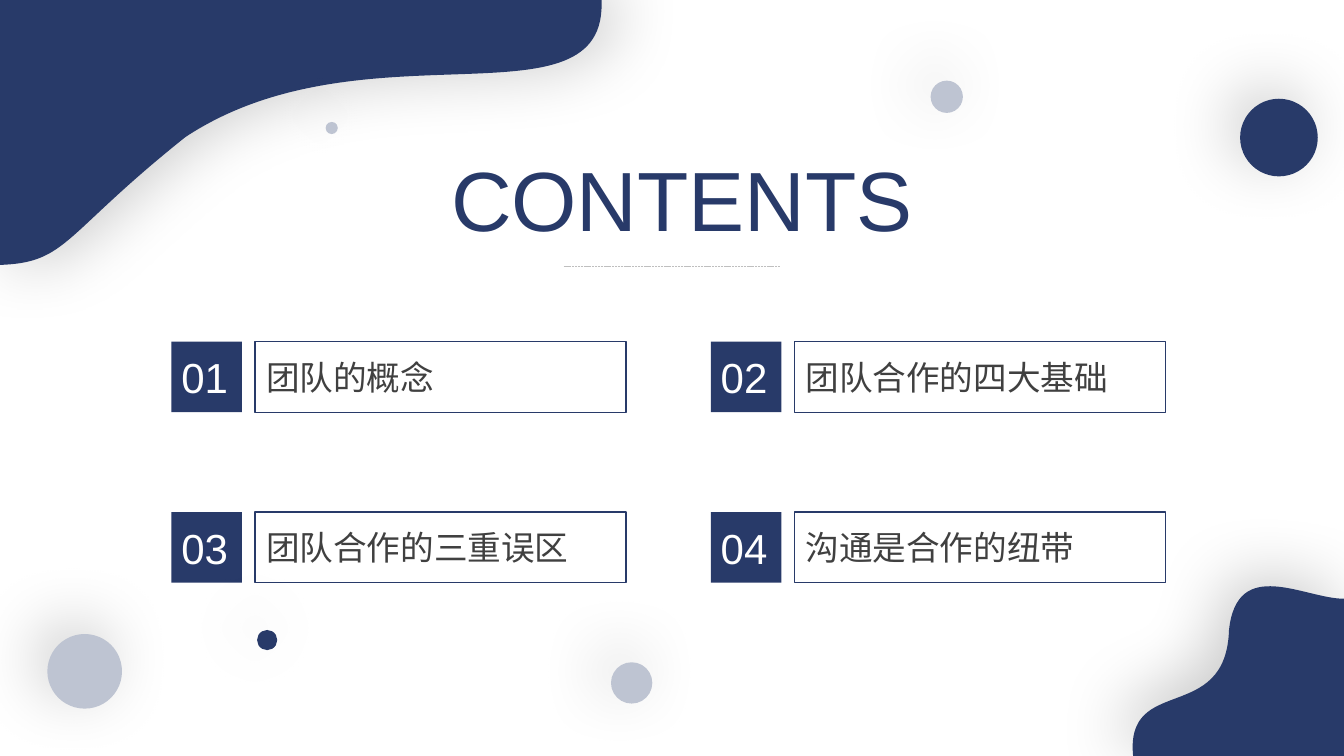
from lxml.etree import SubElement as Sub
from pptx import Presentation
from pptx.dml.color import RGBColor as Rgb
from pptx.enum.dml import MSO_LINE as Dash
from pptx.enum.shapes import MSO_CONNECTOR as Conn, MSO_SHAPE as Kind
from pptx.enum.text import MSO_ANCHOR as Anchor, PP_ALIGN as Align
from pptx.oxml.ns import qn
from pptx.util import Inches as Inch, Pt

WIDE, HIGH = 13.33, 7.5
NAVY, PALE, DARK, WHITE, GRAY = "283A69", "BEC4D2", "404040", "FFFFFF", "BFBFBF"
TOPICS = ["团队的概念", "团队合作的四大基础", "团队合作的三重误区", "沟通是合作的纽带"]
# Left, top, diameter, colour
DOTS = [
    (0.47, 6.29, 0.74, PALE),
    (12.3, 0.98, 0.77, NAVY),
    (9.23, 0.8, 0.32, PALE),
    (6.06, 6.57, 0.41, PALE),
    (3.23, 1.21, 0.12, PALE),
    (2.55, 6.25, 0.2, NAVY),
]
# Each blob is a start point, then line ends (one point) or Bezier curves (three)
TOP_BLOB = [[(1.84, 1.36)], [(0.56, 2.38), (0.68, 2.63), (-0.1, 2.63)],
            [(-0.1, -0.08)], [(5.96, -0.08)],
            [(6.12, 1.36), (3.64, 0.17), (1.84, 1.36)]]
LOW_BLOB = [[(12.19, 6.25)], [(12.27, 5.51), (12.94, 5.94), (13.33, 5.94)],
            [(13.33, 7.51)], [(11.24, 7.51)],
            [(11.15, 6.68), (12.16, 7.2), (12.19, 6.25)]]


def color(code):
    return Rgb.from_string(code)


def paint(shape, fill=None, line=None):
    shape.shadow.inherit = False
    if fill:
        shape.fill.solid()
        shape.fill.fore_color.rgb = color(fill)
    else:
        shape.fill.background()
    if line:
        shape.line.color.rgb = color(line)
        shape.line.width = Pt(1)
    else:
        shape.line.fill.background()


def fade(node, share):
    Sub(node, qn("a:alpha"), val=str(share * 1000))


def cast(shape, angle):
    """Add a soft shadow falling at the angle in degrees."""
    effects = shape._element.spPr.find(qn("a:effectLst"))
    shade = Sub(effects, qn("a:outerShdw"), blurRad=str(Pt(48)), dist=str(Pt(12)),
                dir=str(angle * 60000), algn="ctr", rotWithShape="0")
    fade(Sub(shade, qn("a:srgbClr"), val="000000"), 20)


def write(shape, text, size, ink, align):
    frame = shape.text_frame
    frame.text = text
    frame.word_wrap = True
    frame.vertical_anchor = Anchor.MIDDLE
    line = frame.paragraphs[0]
    line.alignment = align
    font = line.runs[0].font
    font.name, font.size, font.color.rgb = "Arial", Pt(size), color(ink)


def block(host, kind, box, fill=None, line=None):
    shape = host.shapes.add_shape(kind, *map(Inch, box))
    paint(shape, fill, line)
    return shape


def blob(slide, box, outline, angle):
    """Draw a curved outline whose bounds are the box."""
    left, top, width, height = box
    pen = slide.shapes.build_freeform(Inch(left), Inch(top))
    pen.add_line_segments([(Inch(left + width), Inch(top)),
                           (Inch(left + width), Inch(top + height)),
                           (Inch(left), Inch(top + height))])
    shape = pen.convert_to_shape()
    track = shape._element.spPr.find(".//" + qn("a:path"))
    for node in list(track):
        track.remove(node)
    for index, points in enumerate(outline):
        tag = "cubicBezTo" if len(points) == 3 else "lnTo" if index else "moveTo"
        move = Sub(track, qn("a:" + tag))
        for x, y in points:
            Sub(move, qn("a:pt"), x=str(Inch(x - left)), y=str(Inch(y - top)))
    Sub(track, qn("a:close"))
    paint(shape, NAVY)
    cast(shape, angle)


def dot(slide, left, top, size, fill):
    cast(block(slide, Kind.OVAL, (left, top, size, size), fill), 225)


def head(slide, box):
    left, top, width, height = box
    title = slide.shapes.title
    title.left, title.top, title.width, title.height = map(Inch, box)
    write(title, "CONTENTS", 60, NAVY, Align.CENTER)
    low = top + height + 0.12
    rule = slide.shapes.add_connector(
        Conn.STRAIGHT, *map(Inch, (left + 1.44, low, left + 3.59, low)))
    rule.line.color.rgb = color(GRAY)
    rule.line.width = Pt(0.5)
    rule.line.dash_style = Dash.SQUARE_DOT
    Sub(rule._element.spPr, qn("a:effectLst"))


def panel(slide, box):
    """Lay a translucent white sheet behind the title."""
    sheet = block(slide, Kind.RECTANGLE, box, WHITE)
    fade(sheet._element.spPr.find(qn("a:solidFill"))[0], 89)
    slide.shapes.title._element.addprevious(sheet._element)


def item(slide, box, number, topic):
    left, top, width, side = box
    start = left + side + 0.13
    group = slide.shapes.add_group_shape()
    block(group, Kind.RECTANGLE, (left, top, side, side), NAVY)
    block(group, Kind.RECTANGLE, (start, top, left + width - start, side), line=NAVY)
    label = group.shapes.add_textbox(*map(Inch, (start + 0.01, top + 0.1, 3.92, 0.5)))
    write(label, topic, 24, DARK, Align.LEFT)
    count = group.shapes.add_textbox(*map(Inch, (left - 0.18, top + 0.05, 1.02, 0.6)))
    write(count, f"{number:02}", 30, WHITE, Align.CENTER)


def agenda(slide, box):
    """Set the topics in two columns and two rows."""
    left, top, width, height = box
    wide, high = 4.51, 0.7
    for index, topic in enumerate(TOPICS):
        row, col = divmod(index, 2)
        spot = (left + col * (width - wide), top + row * (height - high), wide, high)
        item(slide, spot, index + 1, topic)


def main():
    deck = Presentation()
    deck.slide_width, deck.slide_height = Inch(WIDE), Inch(HIGH)
    slide = deck.slides.add_slide(deck.slide_layouts[5])
    panel(slide, (0.69, 0.68, 11.94, 6.15))
    agenda(slide, (1.7, 3.39, 9.86, 2.39))
    head(slide, (4.15, 1.41, 5.23, 1.11))
    blob(slide, (-0.1, -0.08, 6.06, 2.7), TOP_BLOB, 359)
    blob(slide, (11.23, 5.82, 2.1, 1.69), LOW_BLOB, 225)
    for spot in DOTS:
        dot(slide, *spot)
    deck.save("out.pptx")


if __name__ == "__main__":
    main()
